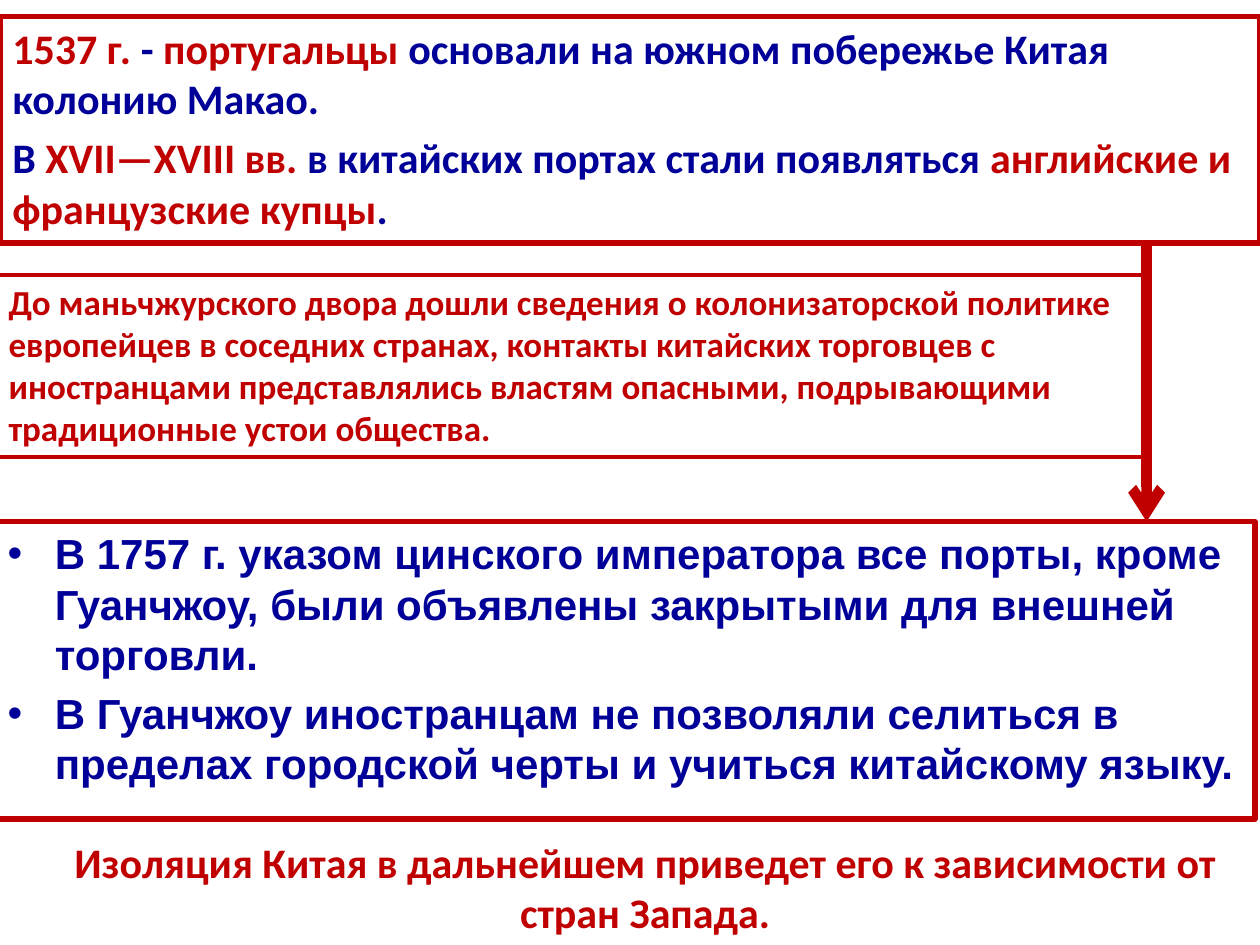
from lxml.etree import SubElement
from pptx import Presentation
from pptx.dml.color import RGBColor
from pptx.enum.shapes import MSO_CONNECTOR, MSO_SHAPE
from pptx.enum.text import MSO_ANCHOR, MSO_AUTO_SIZE, PP_ALIGN
from pptx.oxml.ns import qn
from pptx.util import Inches, Pt

RED = RGBColor(0xC0, 0x00, 0x00)
NAVY = RGBColor(0x00, 0x00, 0x99)


def write_text(frame, paragraphs, size=24, font="Calibri", align=PP_ALIGN.LEFT, spacing=0.2):
    """Fill a text frame with paragraphs, each a list of (text, colour) runs."""
    frame.word_wrap = True
    for index, runs in enumerate(paragraphs):
        paragraph = frame.add_paragraph() if index else frame.paragraphs[0]
        paragraph.alignment = align
        paragraph.space_before = Pt(size * spacing)
        for text, color in runs:
            run = paragraph.add_run()
            run.text = text
            run.font.size = Pt(size)
            run.font.name = font
            run.font.bold = True
            run.font.color.rgb = color


def outline(item, width):
    """Give a shape or connector a solid red line."""
    item.line.color.rgb = RED
    item.line.width = Pt(width)


def add_framed_text(slide, left, top, width, height, paragraphs, line_width=3, **text_format):
    """Add an unfilled rectangle with a red outline and text."""
    frame = slide.shapes.add_shape(
        MSO_SHAPE.RECTANGLE, Inches(left), Inches(top), Inches(width), Inches(height))
    frame.shadow.inherit = False
    frame.fill.background()
    outline(frame, line_width)
    frame.text_frame.vertical_anchor = MSO_ANCHOR.TOP
    frame.text_frame.auto_size = MSO_AUTO_SIZE.SHAPE_TO_FIT_TEXT
    write_text(frame.text_frame, paragraphs, **text_format)


def add_conclusion(slide, left, top, width, height, text):
    """Add the centred closing statement."""
    conclusion = slide.shapes.add_textbox(
        Inches(left), Inches(top), Inches(width), Inches(height))
    conclusion.text_frame.auto_size = MSO_AUTO_SIZE.SHAPE_TO_FIT_TEXT
    write_text(conclusion.text_frame, [[(text, RED)]], align=PP_ALIGN.CENTER, spacing=0)


def add_down_arrow(slide, x, top, bottom):
    """Add a thick vertical arrow pointing down."""
    arrow = slide.shapes.add_connector(
        MSO_CONNECTOR.STRAIGHT, Inches(x), Inches(top), Inches(x), Inches(bottom))
    outline(arrow, 6)
    SubElement(arrow.line._get_or_add_ln(), qn("a:tailEnd"), type="arrow")
    SubElement(arrow._element.spPr, qn("a:effectLst"))


def fill_decrees(decrees, left, top, width, height, items):
    """Place the body placeholder and fill it with the bulleted decrees."""
    decrees.left, decrees.top = Inches(left), Inches(top)
    decrees.width, decrees.height = Inches(width), Inches(height)
    outline(decrees, 3)
    write_text(decrees.text_frame, [[(item, NAVY)] for item in items], font="Arial")


def main():
    """Build the slide on the isolation of China."""
    presentation = Presentation()
    presentation.slide_width, presentation.slide_height = Inches(10), Inches(7.5)
    slide = presentation.slides.add_slide(presentation.slide_layouts[1])
    title = slide.shapes.title._element
    title.getparent().remove(title)

    fill_decrees(slide.placeholders[1], -0.04, 4.14, 10, 2.36, [
        "В 1757 г. указом цинского императора все порты, кроме Гуанчжоу, "
        "были объявлены закрытыми для внешней торговли.",
        "В Гуанчжоу иностранцам не позволяли селиться в пределах городской черты "
        "и учиться китайскому языку.",
    ])
    add_conclusion(slide, 0.12, 6.59, 10, 0.91,
                   "Изоляция Китая в дальнейшем приведет его к зависимости от стран Запада.")
    add_framed_text(slide, 0, 0.13, 10, 1.8, [
        [("1537 г. ", RED), ("- ", NAVY), ("португальцы ", RED),
         ("основали на южном побережье Китая колонию Макао.", NAVY)],
        [("В ", NAVY), ("XVII—XVIII вв. ", RED),
         ("в китайских портах стали появляться ", NAVY),
         ("английские и французские купцы", RED), (".", NAVY)],
    ])
    add_framed_text(slide, -0.03, 2.18, 9.13, 1.45, [[(
        "До маньчжурского двора дошли сведения о колонизаторской политике европейцев "
        "в соседних странах, контакты китайских торговцев с иностранцами представлялись "
        "властям опасными, подрывающими традиционные устои общества.", RED)]],
        line_width=2.25, size=20)
    add_down_arrow(slide, 9.1, 1.93, 4.14)
    presentation.save("out.pptx")


if __name__ == "__main__":
    main()
